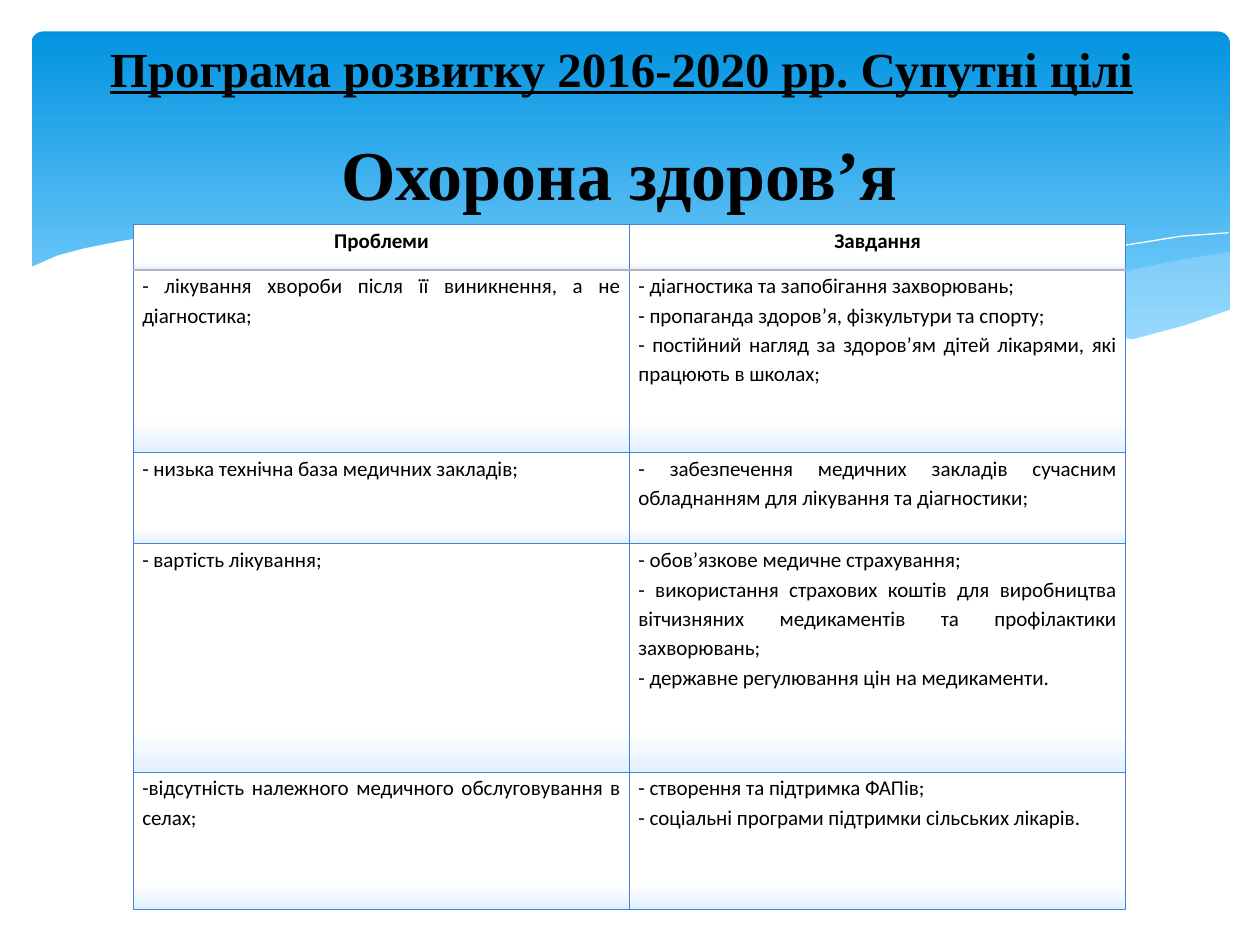
from lxml.etree import SubElement
from pptx import Presentation
from pptx.dml.color import RGBColor
from pptx.enum.text import MSO_ANCHOR, MSO_AUTO_SIZE, PP_ALIGN
from pptx.enum.shapes import MSO_SHAPE
from pptx.oxml.ns import qn
from pptx.util import Pt

BLACK = RGBColor(0x00, 0x00, 0x00)
WHITE = RGBColor(0xFF, 0xFF, 0xFF)
SKY_TOP = RGBColor(0x02, 0x93, 0xE0)
SKY_BOTTOM = RGBColor(0x83, 0xD3, 0xFE)
WAVE = RGBColor(0xC6, 0xE7, 0xFC)
CELL_BOTTOM = RGBColor(0xE3, 0xF0, 0xFF)
BORDER = RGBColor(0x45, 0x84, 0xD3)
HEADER_RULE = RGBColor(0xB4, 0xB4, 0xB4)


def set_gradient(fill, stops):
    fill.gradient()
    fill.gradient_angle = 270
    for stop, (position, color) in zip(fill.gradient_stops, stops):
        stop.position = position
        stop.color.rgb = color


def set_border(cell, side, color, width):
    ln = SubElement(cell._tc.get_or_add_tcPr(), qn(f"a:ln{side}"), w=str(Pt(width)))
    SubElement(SubElement(ln, qn("a:solidFill")), qn("a:srgbClr"), val=str(color))


prs = Presentation()
prs.slide_width, prs.slide_height = Pt(720), Pt(540)
s = prs.slides.add_slide(prs.slide_layouts[5])

sky = s.shapes.add_shape(MSO_SHAPE.ROUNDED_RECTANGLE, Pt(18), Pt(18), Pt(684.7), Pt(194.4))
sky.adjustments[0] = 0.034
sky.shadow.inherit = False
sky.line.fill.background()
set_gradient(sky.fill, [(0, SKY_TOP), (0.9, SKY_BOTTOM)])

right_wave = [
    (702.7, 144), (682.6, 146.9), (652.3, 153.4), (619.9, 160.6), (579.6, 170.6),
    (524.9, 182.2), (475.9, 190.8), (507.6, 195.1), (536.4, 198), (562.3, 199.4),
    (586.1, 200.2), (614.9, 198.7), (640.1, 195.8), (663.1, 190.8), (683.3, 185),
    (702.7, 177.8),
]
middle_wave = [
    (643, 196.6), (602.6, 190.8), (558, 182.9), (508.3, 172.8), (452.9, 159.8),
    (409.7, 149.8), (370.1, 142.6), (334.8, 137.5), (302.4, 134.6), (273.6, 133.2),
    (247.7, 133.9), (205.9, 137.5), (246.2, 143.3), (290.9, 151.9), (323.3, 159.8),
    (381.6, 172.8), (432.7, 183.6), (478.8, 191.5), (519.8, 197.3), (556.6, 199.4),
    (589, 200.2), (617, 199.4),
]
falling_line = [
    (222.5, 140.4), (247.7, 136.8), (288.7, 134.6), (337.7, 136.1), (383.8, 139.7),
    (437.8, 146.9), (500.4, 157.7), (572.4, 173.5), (653, 195.8),
]
rising_line = [
    (441.4, 185), (500.4, 169.2), (558.7, 155.5), (601.9, 146.9), (644.4, 139.7),
    (675.4, 135.4), (702, 133.2),
]
white_wave = [
    (703.4, 177.1), (676.8, 186.5), (647.3, 193.7), (612, 198), (582.5, 199.4),
    (547.9, 198), (509.8, 194.4), (466.6, 188.6), (416.9, 180), (362.2, 167.8),
    (321.8, 158.4), (281.5, 149), (244.8, 141.8), (210.2, 136.8), (180, 133.9),
    (151.9, 132.5), (127.4, 132.5), (105.1, 133.2), (85.7, 134.6), (68.4, 137.5),
    (48.2, 141.8), (33.1, 146.2), (16.6, 153.4), (16.6, 236.9), (703.4, 236.9),
]
curves = [
    (right_wave, WAVE, 29), (middle_wave, WAVE, 40), (falling_line, None, 100),
    (rising_line, None, 100), (white_wave, WHITE, 100),
]
for points, color, opacity in curves:
    builder = s.shapes.build_freeform(*points[0], scale=Pt(1))
    builder.add_line_segments(points[1:], close=color is not None)
    sp = builder.convert_to_shape()
    sp.shadow.inherit = False
    if color is None:
        sp.fill.background()
        sp.line.color.rgb = WHITE
        sp.line.width = Pt(0)
        continue
    sp.line.fill.background()
    sp.fill.solid()
    sp.fill.fore_color.rgb = color
    if opacity < 100:
        clr = sp.element.spPr.find(qn("a:solidFill")).find(qn("a:srgbClr"))
        SubElement(clr, qn("a:alpha"), val=str(opacity * 1000))

title = s.shapes.title
title.element.getparent().append(title.element)
title.left, title.top, title.width, title.height = Pt(20.2), Pt(-19.4), Pt(669.6), Pt(115.9)
subtitle = s.shapes.add_textbox(Pt(187.9), Pt(71.3), Pt(470.9), Pt(55.4))
headings = [
    (title, "Програма розвитку 2016-2020 рр. Супутні цілі", 28, True, PP_ALIGN.CENTER, MSO_ANCHOR.MIDDLE),
    (subtitle, "Охорона здоров’я", 40, None, PP_ALIGN.LEFT, MSO_ANCHOR.TOP),
]
for sp, text, size, underline, align, anchor in headings:
    tf = sp.text_frame
    tf.text = text
    tf.word_wrap = True
    tf.auto_size = MSO_AUTO_SIZE.NONE
    tf.vertical_anchor = anchor
    p = tf.paragraphs[0]
    p.alignment = align
    p.font.name = "Times New Roman"
    p.font.size = Pt(size)
    p.font.bold = True
    p.font.underline = underline
    p.font.color.rgb = BLACK

rows = [
    (26, "Проблеми", "Завдання"),
    (104.4, "- лікування хвороби після її виникнення, а не діагностика;",
     "- діагностика та запобігання захворювань;\n"
     "- пропаганда здоров’я, фізкультури та спорту;\n"
     "- постійний нагляд за здоров’ям дітей лікарями, які працюють в школах;"),
    (52.2, "- низька технічна база медичних закладів;",
     "- забезпечення медичних закладів сучасним обладнанням для лікування та діагностики;"),
    (130.4, "- вартість лікування;",
     "- обов’язкове медичне страхування;\n"
     "- використання страхових коштів для виробництва вітчизняних медикаментів "
     "та профілактики захворювань;\n"
     "- державне регулювання цін на медикаменти."),
    (78.3, "-відсутність належного медичного обслуговування в селах;",
     "- створення та підтримка ФАПів;\n"
     "- соціальні програми підтримки сільських лікарів."),
]
table = s.shapes.add_table(len(rows), 2, Pt(76.3), Pt(128.2), Pt(567), Pt(391.3)).table
table.first_row = table.horz_banding = False
for column in table.columns:
    column.width = Pt(283.5)
for i, (height, *texts) in enumerate(rows):
    table.rows[i].height = Pt(height)
    header = i == 0
    for j, text in enumerate(texts):
        cell = table.cell(i, j)
        cell.margin_left = cell.margin_right = Pt(5)
        cell.margin_top = cell.margin_bottom = 0
        for side in "LRTB":
            rule = (i, side) in [(0, "B"), (1, "T")]
            set_border(cell, side, HEADER_RULE if rule else BORDER, 1.25 if rule else 0.75)
        set_gradient(cell.fill, [(0.82, WHITE), (1, CELL_BOTTOM)])
        cell.text_frame.text = text
        for p in cell.text_frame.paragraphs:
            p.alignment = PP_ALIGN.CENTER if header else PP_ALIGN.JUSTIFY
            p.line_spacing = 1.15
            p.font.name = "Calibri"
            p.font.size = Pt(12)
            p.font.bold = header
            p.font.color.rgb = BLACK

prs.save("out.pptx")
